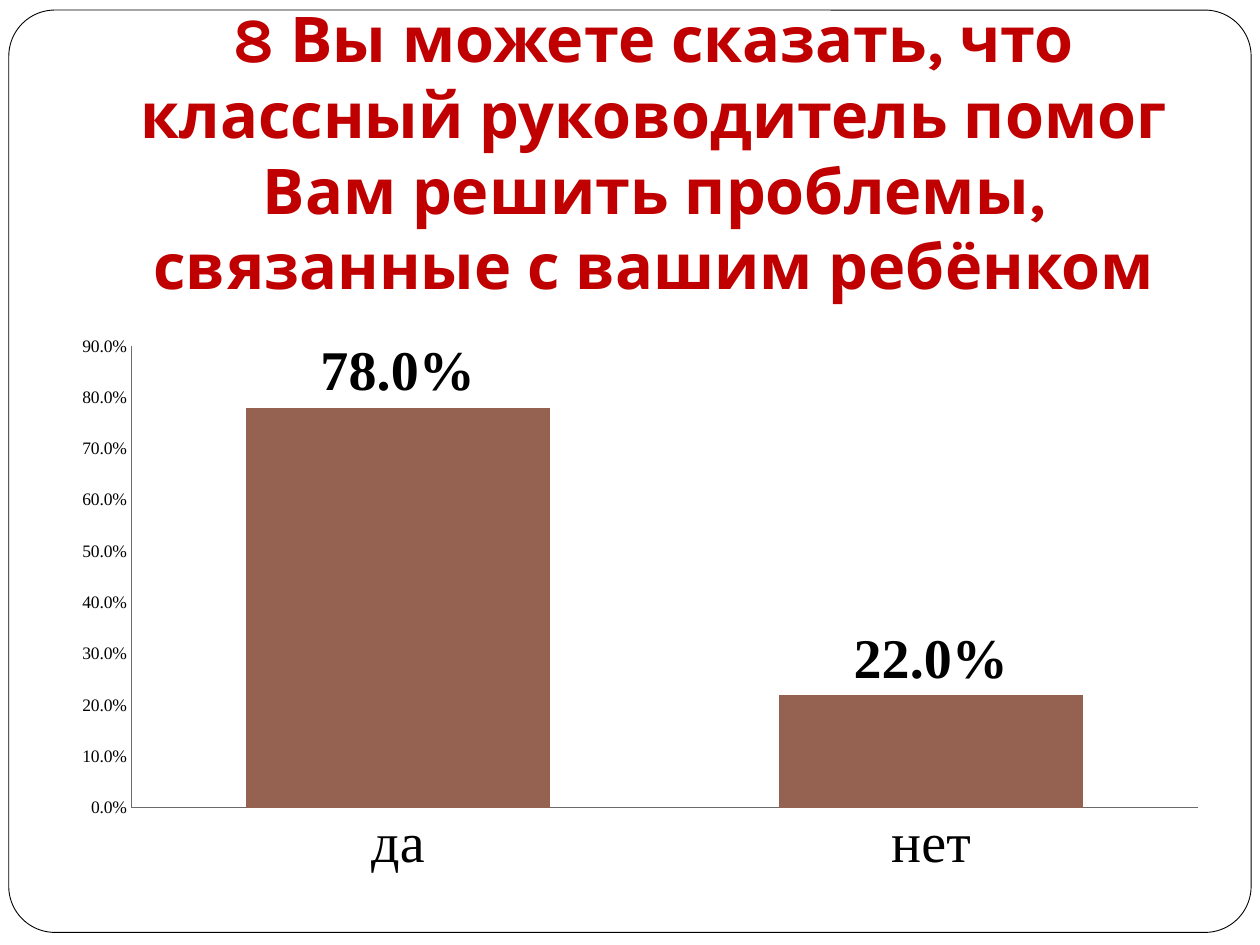
from dataclasses import dataclass

from pptx import Presentation
from pptx import util as u
from pptx.chart.data import CategoryChartData
from pptx.dml.color import RGBColor
from pptx.enum import chart as ch, shapes, text


@dataclass(frozen=True)
class Theme:
    paper: RGBColor = RGBColor.from_string("FFFFFF")
    ink: RGBColor = RGBColor.from_string("000000")
    heading: RGBColor = RGBColor.from_string("C00000")
    bar: RGBColor = RGBColor.from_string("956251")
    axis: RGBColor = RGBColor.from_string("6B6B6B")
    title_font: str = "Karla"
    chart_font: str = "Times New Roman"
    title_size: u.Pt = u.Pt(36)
    label_size: u.Pt = u.Pt(32)
    scale_size: u.Pt = u.Pt(10)


@dataclass(frozen=True)
class Answer:
    label: str
    share: float


THEME = Theme()
PERCENT = "0.0%"
QUESTION = ("8 Вы можете сказать, что классный руководитель помог Вам "
            "решить проблемы, связанные с вашим ребёнком")
ANSWERS = [Answer("да", 0.78), Answer("нет", 0.22)]


def inches(*lengths: float) -> list[u.Inches]:
    return [u.Inches(length) for length in lengths]


def add_frame(page) -> None:
    """Rounded page border, placed behind the title."""
    frame = page.shapes.add_shape(
        shapes.MSO_SHAPE.ROUNDED_RECTANGLE, *inches(0.07, 0.08, 9.86, 7.32))
    frame.adjustments[0] = 0.05
    frame.shadow.inherit = False
    frame.fill.solid()
    frame.fill.fore_color.rgb = THEME.paper
    frame.line.color.rgb = THEME.ink
    frame.line.width = u.Pt(0.5)
    page.shapes.title.element.addprevious(frame.element)


def fill_title(page, wording: str) -> None:
    title = page.shapes.title
    title.left, title.top, title.width, title.height = inches(0.94, 1.25, 8.5, 1.25)
    box = title.text_frame
    box.text = wording
    box.word_wrap = True
    box.auto_size = text.MSO_AUTO_SIZE.NONE
    box.vertical_anchor = text.MSO_ANCHOR.BOTTOM
    box.margin_left, box.margin_top, box.margin_right, box.margin_bottom = inches(
        0.1, 0.05, 0.1, 0.1)
    para = box.paragraphs[0]
    para.alignment = text.PP_ALIGN.CENTER
    para.font.name = THEME.title_font
    para.font.size = THEME.title_size
    para.font.bold = True
    para.font.color.rgb = THEME.heading


def style_axis(axis, size: u.Pt) -> None:
    axis.has_major_gridlines = False
    axis.major_tick_mark = ch.XL_TICK_MARK.NONE
    axis.minor_tick_mark = ch.XL_TICK_MARK.NONE
    axis.tick_labels.font.size = size
    axis.format.line.color.rgb = THEME.axis
    axis.format.line.width = u.Pt(0.75)


def add_answer_chart(page, answers: list[Answer]) -> None:
    data = CategoryChartData(number_format=PERCENT)
    data.categories = [answer.label for answer in answers]
    data.add_series("Series 1", [answer.share for answer in answers])
    chart = page.shapes.add_chart(
        ch.XL_CHART_TYPE.COLUMN_CLUSTERED, *inches(0.47, 2.58, 9.22, 4.45), data).chart
    chart.has_title = False
    chart.has_legend = False
    chart.font.name = THEME.chart_font
    chart.font.size = THEME.scale_size
    chart.font.color.rgb = THEME.ink

    # Axes
    style_axis(chart.category_axis, THEME.label_size)
    style_axis(chart.value_axis, THEME.scale_size)
    chart.value_axis.minimum_scale = 0
    chart.value_axis.maximum_scale = 0.9
    chart.value_axis.major_unit = 0.1
    chart.value_axis.tick_labels.number_format = PERCENT
    chart.value_axis.tick_labels.number_format_is_linked = False

    # Columns and their labels
    plot = chart.plots[0]
    plot.gap_width = 75
    plot.vary_by_categories = False
    columns = plot.series[0]
    columns.format.fill.solid()
    columns.format.fill.fore_color.rgb = THEME.bar
    labels = columns.data_labels
    labels.show_value = True
    labels.position = ch.XL_LABEL_POSITION.OUTSIDE_END
    labels.number_format = PERCENT
    labels.number_format_is_linked = False
    labels.font.name = THEME.chart_font
    labels.font.size = THEME.label_size
    labels.font.bold = True
    labels.font.color.rgb = THEME.ink


def main() -> None:
    deck = Presentation()
    deck.slide_width, deck.slide_height = inches(10, 7.5)
    page = deck.slides.add_slide(deck.slide_layouts.get_by_name("Title Only"))
    add_frame(page)
    fill_title(page, QUESTION)
    add_answer_chart(page, ANSWERS)
    deck.save("out.pptx")


if __name__ == "__main__":
    main()
